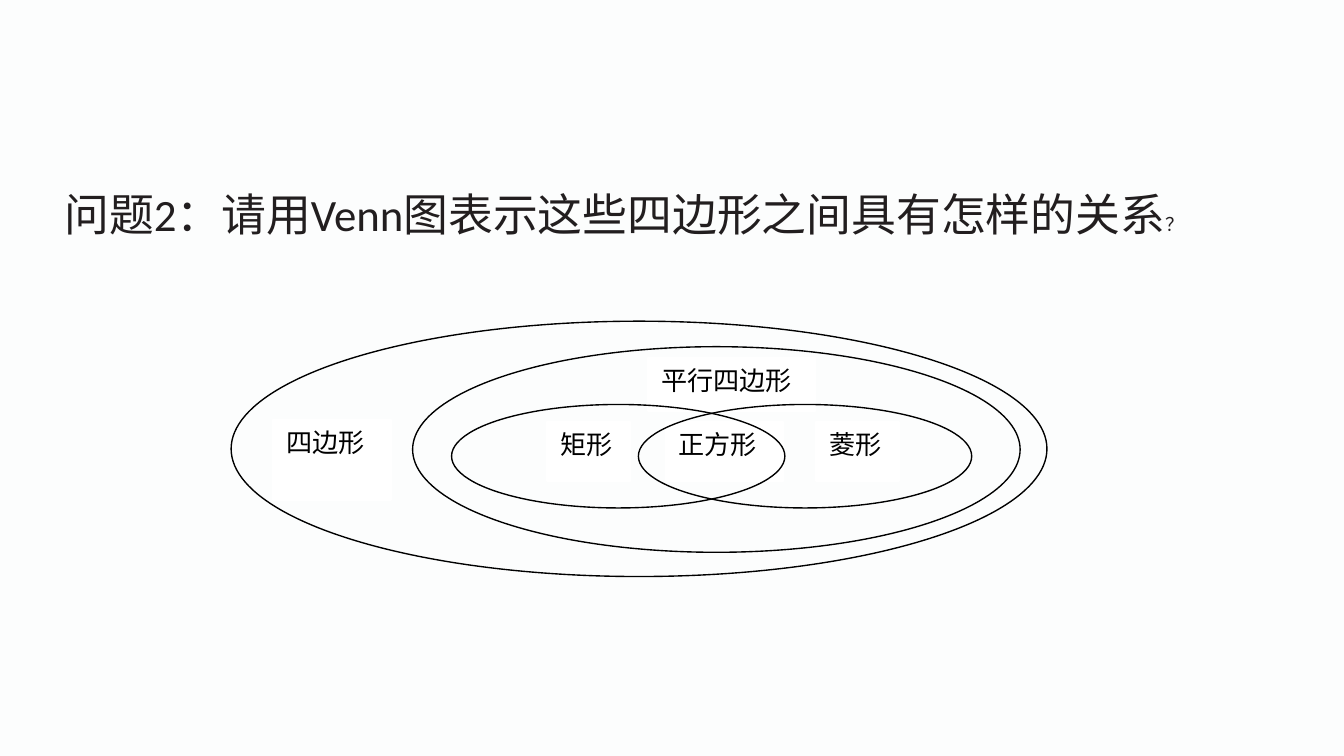
from pptx import Presentation
from pptx.dml.color import RGBColor
from pptx.enum.shapes import MSO_SHAPE as Shape
from pptx.enum.text import MSO_ANCHOR as Anchor, PP_ALIGN as Align
from pptx.util import Inches, Pt

PAPER = RGBColor(0xFC, 0xFD, 0xFD)
INK = RGBColor(0x22, 0x1E, 0x1F)
BLACK = RGBColor(0, 0, 0)
WHITE = RGBColor(0xFF, 0xFF, 0xFF)


def add_ellipse(shapes, left, top, width, height):
    ellipse = shapes.add_shape(Shape.OVAL, Inches(left), Inches(top), Inches(width), Inches(height))
    ellipse.shadow.inherit = False
    ellipse.fill.background()
    ellipse.line.color.rgb = BLACK
    ellipse.line.width = Pt(0.75)


def add_label(shapes, text, left, top, width, height):
    label = shapes.add_shape(Shape.RECTANGLE, Inches(left), Inches(top), Inches(width), Inches(height))
    label.shadow.inherit = False
    label.fill.solid()
    label.fill.fore_color.rgb = WHITE
    label.line.color.rgb = WHITE
    label.line.width = Pt(0.75)
    label.text_frame.vertical_anchor = Anchor.TOP
    para = label.text_frame.paragraphs[0]
    para.text = text
    para.alignment = Align.LEFT
    para.font.name = "Calibri"
    para.font.size = Pt(14)
    para.font.color.rgb = BLACK


# Page in 16:9
deck = Presentation()
deck.slide_width = Inches(10)
deck.slide_height = Inches(10 * 9 / 16)
page = deck.slides.add_slide(deck.slide_layouts[6])
page.background.fill.solid()
page.background.fill.fore_color.rgb = PAPER

# Question
box = page.shapes.add_textbox(Inches(0.38), Inches(1.34), Inches(8.63), Inches(0.5))
box.text_frame.word_wrap = True
box.text_frame.vertical_anchor = Anchor.MIDDLE
para = box.text_frame.paragraphs[0]
para.font.color.rgb = INK
for text, font, size in [
    ("问题", "Roboto", 24),
    ("2", "Calibri", 24),
    ("：请用", "Roboto", 24),
    ("Venn", "Calibri", 24),
    ("图表示这些四边形之间具有怎样的关系", "Roboto", 24),
    ("？", "Roboto", 10),
]:
    span = para.add_run()
    span.text = text
    span.font.name = font
    span.font.size = Pt(size)

# Parallelograms: rectangles and rhombuses overlap in squares
parallelograms = page.shapes.add_group_shape().shapes
add_label(parallelograms, "正方形", 4.95, 3.14, 0.88, 0.44)
add_label(parallelograms, "平行四边形", 4.82, 2.66, 1.25, 0.4)
add_ellipse(parallelograms, 4.75, 3.01, 2.48, 0.77)
add_ellipse(parallelograms, 3.07, 2.58, 4.52, 1.53)
add_ellipse(parallelograms, 3.36, 3.01, 2.48, 0.77)
for text, left in [("矩形", 4.07), ("菱形", 6.07)]:
    add_label(parallelograms, text, left, 3.14, 0.62, 0.44)

# All quadrilaterals
add_ellipse(page.shapes, 1.72, 2.39, 6.07, 1.9)
add_label(page.shapes, "四边形", 2.03, 3.12, 0.88, 0.6)

deck.save("out.pptx")
